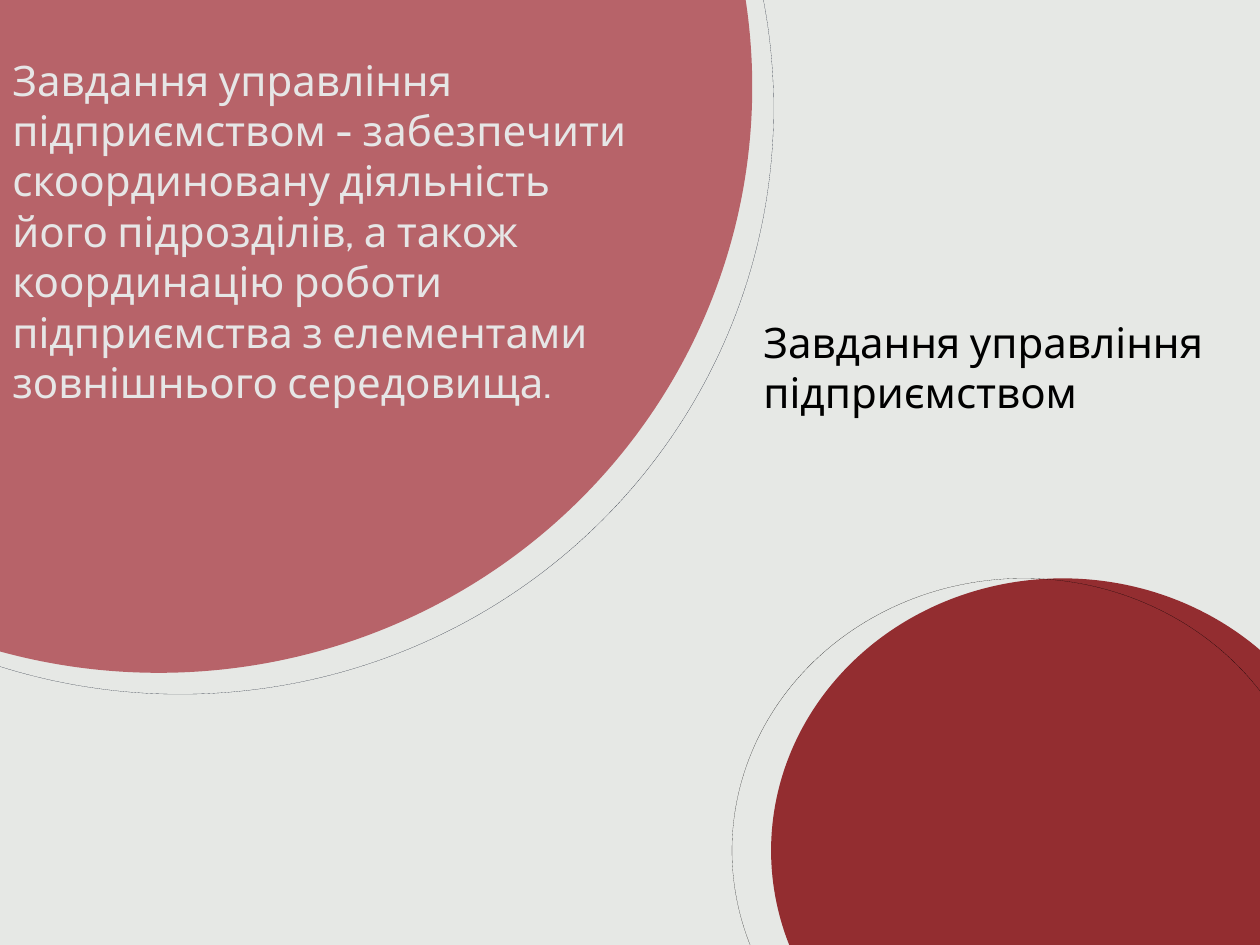
from dataclasses import dataclass

from pptx import Presentation
from pptx.dml.color import RGBColor
from pptx.enum.shapes import MSO_SHAPE
from pptx.enum.text import MSO_ANCHOR, PP_ALIGN
from pptx.util import Inches, Pt


@dataclass(frozen=True)
class Theme:
    background: str = "E6E8E5"
    rose: str = "B76369"
    crimson: str = "932D30"
    navy: str = "010A1C"
    black: str = "000000"
    light: str = "E6E6E6"
    font: str = "Cabin"
    text_size: float = 24
    line_width: float = 0.05


class SlideBuilder:
    def __init__(self, slide, theme):
        self.slide = slide
        self.theme = theme

    def background(self):
        fill = self.slide.background.fill
        fill.solid()
        fill.fore_color.rgb = RGBColor.from_string(self.theme.background)

    def circle(self, left, top, size, fill=None, line=None):
        width, height = size
        shape = self.slide.shapes.add_shape(
            MSO_SHAPE.FLOWCHART_CONNECTOR,
            Inches(left), Inches(top), Inches(width), Inches(height))
        shape.shadow.inherit = False
        if fill:
            shape.fill.solid()
            shape.fill.fore_color.rgb = RGBColor.from_string(fill)
        else:
            shape.fill.background()
        if line:
            shape.line.color.rgb = RGBColor.from_string(line)
            shape.line.width = Pt(self.theme.line_width)
        else:
            shape.line.fill.background()

    def text(self, left, top, width, height, wording, color):
        box = self.slide.shapes.add_textbox(
            Inches(left), Inches(top), Inches(width), Inches(height))
        frame = box.text_frame
        frame.word_wrap = True
        frame.vertical_anchor = MSO_ANCHOR.TOP
        paragraph = frame.paragraphs[0]
        paragraph.alignment = PP_ALIGN.LEFT
        run = paragraph.add_run()
        run.text = wording
        run.font.name = self.theme.font
        run.font.size = Pt(self.theme.text_size)
        run.font.color.rgb = RGBColor.from_string(color)


def main():
    presentation = Presentation()
    presentation.slide_width = Inches(10)
    presentation.slide_height = Inches(7.5)
    theme = Theme()
    slide = presentation.slides.add_slide(presentation.slide_layouts[6])
    builder = SlideBuilder(slide, theme)
    builder.background()

    # Filled circles, then their shifted outlines
    large, small = (9.42, 9.3), (4.63, 4.32)
    builder.circle(6.12, 4.59, small, fill=theme.crimson)
    builder.circle(-3.45, -3.96, large, fill=theme.rose)
    builder.circle(-3.28, -3.79, large, line=theme.navy)
    builder.circle(5.81, 4.59, small, line=theme.black)

    # Title
    builder.text(5.96, 2.46, 3.69, 0.9,
                 "Завдання управління підприємством", theme.black)

    # Statement on the large circle
    builder.text(0, 0.38, 5.1, 2.98,
                 "Завдання управління підприємством - забезпечити "
                 "скоординовану діяльність його підрозділів, а також "
                 "координацію роботи підприємства з елементами "
                 "зовнішнього середовища.", theme.light)

    presentation.save("out.pptx")


if __name__ == "__main__":
    main()
